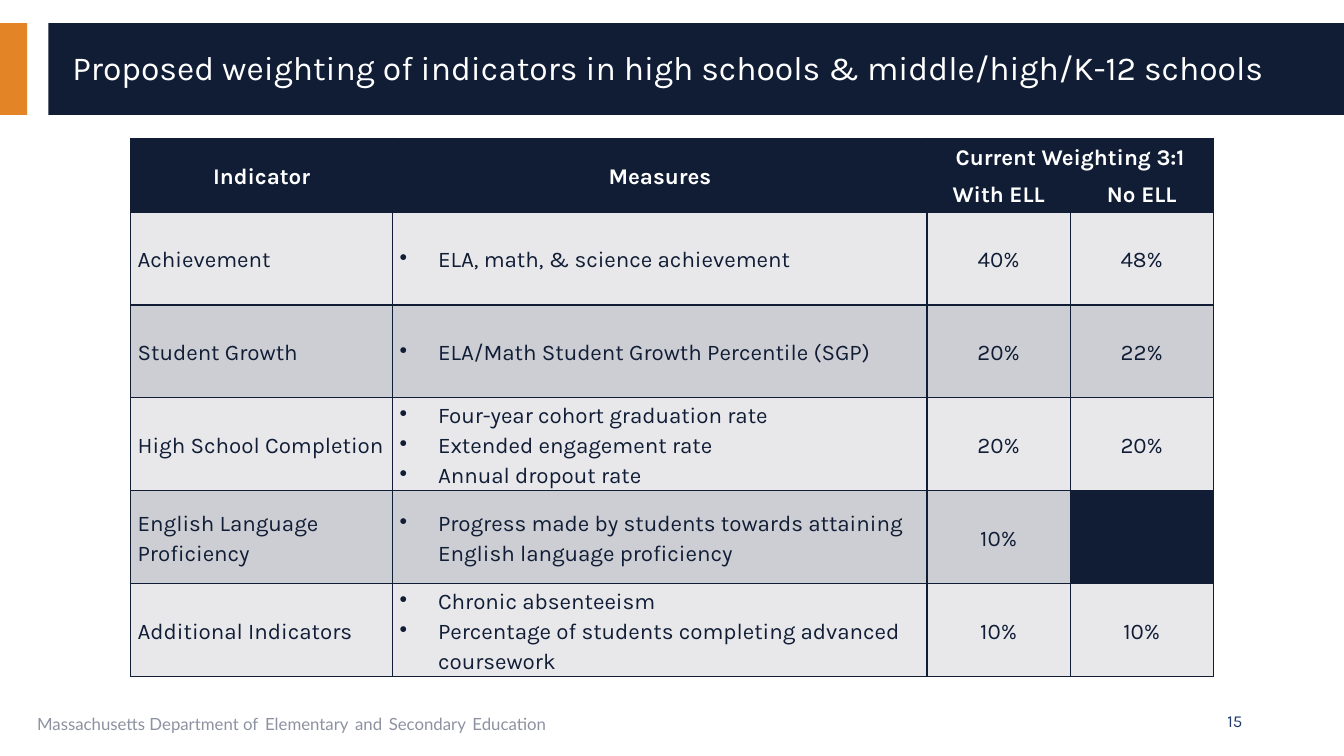
import pptx
import pptx.dml.color
import pptx.enum.shapes
import pptx.enum.text
import pptx.oxml
import pptx.oxml.ns
import pptx.util

RGBColor = pptx.dml.color.RGBColor
NAVY = RGBColor(0x10, 0x1D, 0x35)
ORANGE = RGBColor(0xE3, 0x85, 0x26)
WHITE = RGBColor(0xFF, 0xFF, 0xFF)
BLUE = RGBColor(0x20, 0x3B, 0x6A)
GREY = RGBColor(0x8D, 0x92, 0xA1)
LIGHT_BAND = RGBColor(0xE8, 0xE8, 0xEB)
DARK_BAND = RGBColor(0xCD, 0xCE, 0xD4)

MIDDLE = pptx.enum.text.MSO_ANCHOR.MIDDLE
TOP = pptx.enum.text.MSO_ANCHOR.TOP
LEFT = pptx.enum.text.PP_ALIGN.LEFT
CENTER = pptx.enum.text.PP_ALIGN.CENTER
RIGHT = pptx.enum.text.PP_ALIGN.RIGHT

# The slide is a grid of 100 columns by 100 rows
SLIDE_WIDTH = pptx.util.Inches(13.33)
SLIDE_HEIGHT = pptx.util.Inches(7.5)

COLUMN_WIDTHS = [19.5, 39.76, 10.65, 10.65]
HEADER_ROW, INDICATOR_ROW = 4.9, 12.28

# Indicator lines, measures, weight with ELL, weight without ELL
INDICATORS = [
    (["Achievement"], ["ELA, math, & science achievement"], "40%", "48%"),
    (["Student Growth"], ["ELA/Math Student Growth Percentile (SGP)"], "20%", "22%"),
    (["High School Completion"],
     ["Four-year cohort graduation rate", "Extended engagement rate", "Annual dropout rate"],
     "20%", "20%"),
    (["English Language", "Proficiency"],
     ["Progress made by students towards attaining English language proficiency"],
     "10%", None),
    (["Additional Indicators"],
     ["Chronic absenteeism", "Percentage of students completing advanced coursework"],
     "10%", "10%"),
]


def across(columns):
    return round(SLIDE_WIDTH * columns / 100)


def down(rows):
    return round(SLIDE_HEIGHT * rows / 100)


def place(left, top, width, height):
    return across(left), down(top), across(width), down(height)


def write(paragraph, text, size=16, color=NAVY, font="Karla", bold=False,
          align=LEFT, spacing=None):
    """Append one formatted run to a paragraph."""
    paragraph.alignment = align
    if spacing:
        paragraph.line_spacing = spacing
    run = paragraph.add_run()
    run.text = text
    run.font.size = pptx.util.Pt(size)
    run.font.name = font
    run.font.bold = bold
    run.font.color.rgb = color


def add_bar(slide, area, color):
    bar = slide.shapes.add_shape(pptx.enum.shapes.MSO_SHAPE.RECTANGLE, *area)
    bar.shadow.inherit = False
    bar.fill.solid()
    bar.fill.fore_color.rgb = color
    bar.line.fill.background()


def add_line_of_text(slide, area, anchor=MIDDLE):
    """Add a text box and return its first paragraph."""
    frame = slide.shapes.add_textbox(*area).text_frame
    frame.word_wrap = True
    frame.vertical_anchor = anchor
    return frame.paragraphs[0]


def add_bullet(paragraph):
    properties = paragraph._p.get_or_add_pPr()
    indent = pptx.util.Inches(0.38)
    properties.set("marL", str(indent))
    properties.set("indent", str(-indent))
    bullet = pptx.oxml.parse_xml(
        f'<a:buChar {pptx.oxml.ns.nsdecls("a")} char="•"/>')
    properties.append(bullet)


def style_cell(cell, fill):
    cell.margin_left = cell.margin_right = pptx.util.Inches(0.07)
    cell.margin_top = cell.margin_bottom = 0
    cell.vertical_anchor = MIDDLE
    cell.fill.solid()
    cell.fill.fore_color.rgb = fill
    properties = cell._tc.get_or_add_tcPr()
    for position, side in enumerate(("lnL", "lnR", "lnT", "lnB")):
        border = pptx.oxml.parse_xml(
            f'<a:{side} {pptx.oxml.ns.nsdecls("a")} w="{pptx.util.Pt(1)}">'
            f'<a:solidFill><a:srgbClr val="{NAVY}"/></a:solidFill></a:{side}>')
        properties.insert(position, border)


def fill_cell(cell, lines, fill, bulleted=False, **text_format):
    style_cell(cell, fill)
    frame = cell.text_frame
    for number, line in enumerate(lines):
        paragraph = frame.add_paragraph() if number else frame.paragraphs[0]
        write(paragraph, line, spacing=1.15, **text_format)
        if bulleted:
            add_bullet(paragraph)


def add_weighting_table(slide):
    heights = [HEADER_ROW] * 2 + [INDICATOR_ROW] * len(INDICATORS)
    area = place(9.72, 18.27, sum(COLUMN_WIDTHS), sum(heights))
    table = slide.shapes.add_table(len(heights), len(COLUMN_WIDTHS), *area).table
    for column, width in zip(table.columns, COLUMN_WIDTHS):
        column.width = across(width)
    for row, height in zip(table.rows, heights):
        row.height = down(height)

    # Two header rows with merged headings
    headings = [["Indicator", "Measures", "Current Weighting 3:1", None],
                [None, None, "With ELL", "No ELL"]]
    for row, labels in enumerate(headings):
        for column, label in enumerate(labels):
            fill_cell(table.cell(row, column), [label] if label else [], NAVY,
                      color=WHITE, bold=True, align=CENTER)
    for column in (0, 1):
        table.cell(0, column).merge(table.cell(1, column))
    table.cell(0, 2).merge(table.cell(0, 3))

    # Banded indicator rows
    for number, (indicator, measures, *weights) in enumerate(INDICATORS):
        row = number + len(headings)
        band = DARK_BAND if number % 2 else LIGHT_BAND
        fill_cell(table.cell(row, 0), indicator, band)
        fill_cell(table.cell(row, 1), measures, band, bulleted=True)
        for column, weight in enumerate(weights, start=2):
            cell = table.cell(row, column)
            if weight:
                fill_cell(cell, [weight], band, align=CENTER)
            else:
                style_cell(cell, NAVY)


def add_footer(slide):
    department = add_line_of_text(slide, place(2.03, 92.67, 63.3, 5.33), anchor=TOP)
    words = ["Massachusetts Department of", "Elementary", "and", "Secondary", "Education"]
    for number, word in enumerate(words):
        if number:
            write(department, " ", size=18, color=BLUE, font="Lato")
        write(department, word, size=12, color=GREY, font="Lato")
    page_number = add_line_of_text(slide, place(70.67, 92.67, 22.5, 5.33))
    write(page_number, "15", size=12, color=BLUE, align=RIGHT)


def main():
    deck = pptx.Presentation()
    deck.slide_width, deck.slide_height = SLIDE_WIDTH, SLIDE_HEIGHT
    slide = deck.slides.add_slide(deck.slide_layouts[6])

    # Title band
    add_bar(slide, place(0, 3.07, 2.03, 12.13), ORANGE)
    add_bar(slide, place(3.6, 3.07, 96.4, 12.13), NAVY)
    title = add_line_of_text(slide, place(4.65, 4.27, 93.3, 9.87))
    write(title, "Proposed weighting of indicators in high schools & middle/high/K-12 schools",
          size=24, color=WHITE, spacing=0.9)

    add_weighting_table(slide)
    add_footer(slide)
    deck.save("out.pptx")


if __name__ == "__main__":
    main()
